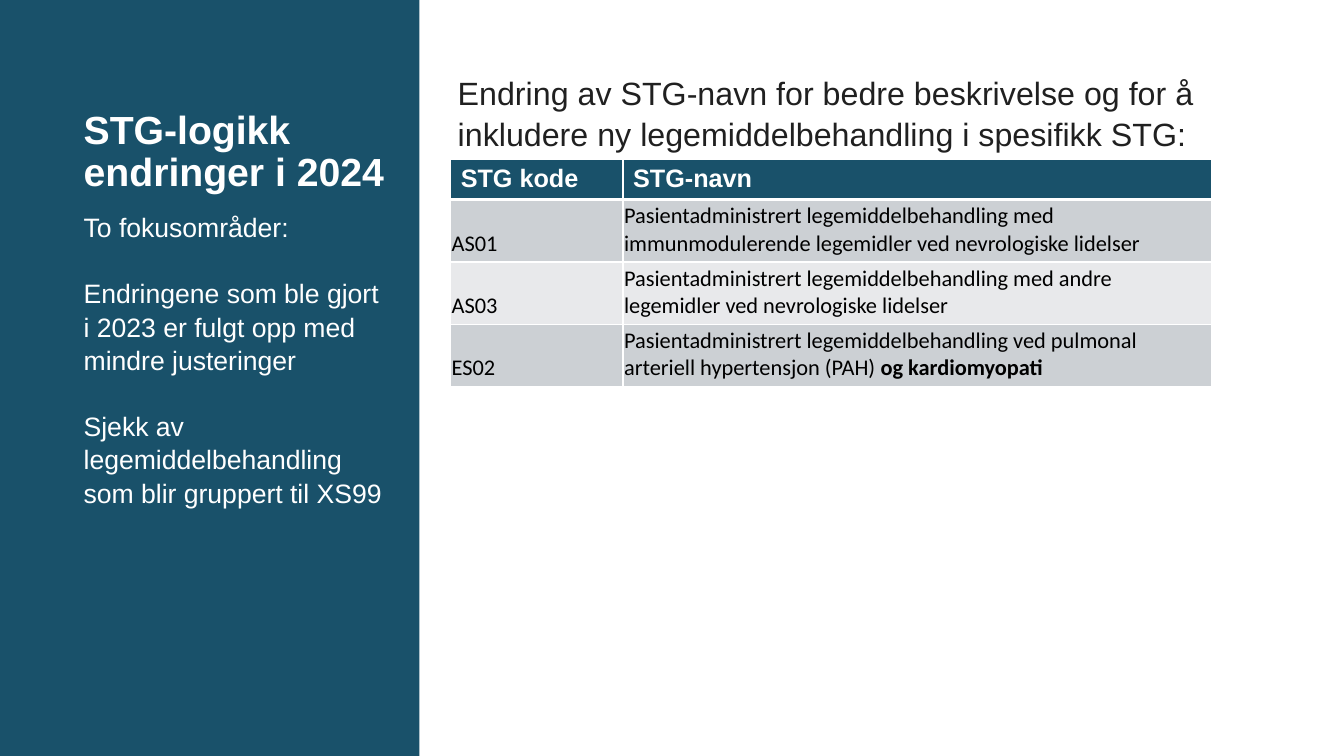
from dataclasses import dataclass

from lxml.etree import SubElement
from pptx import Presentation
from pptx.dml.color import RGBColor
from pptx.enum.shapes import MSO_SHAPE
from pptx.enum.text import MSO_ANCHOR
from pptx.oxml.ns import qn
from pptx.util import Inches, Pt


@dataclass(frozen=True)
class Theme:
    """Colours, fonts and type sizes of the slide."""
    teal: str = "19516A"
    white: str = "FFFFFF"
    ink: str = "202020"
    black: str = "000000"
    bands: tuple = ("CCD0D4", "E8E9EB")
    sans: str = "Arial"
    grid: str = "Calibri"
    title: int = 28
    lead: int = 23
    body: int = 19
    head: int = 18
    cell: int = 16


THEME = Theme()
POINTS = [
    "To fokusområder:",
    "Endringene som ble gjort i 2023 er fulgt opp med mindre justeringer",
    "Sjekk av legemiddelbehandling som blir gruppert til XS99",
]
LEAD = ("Endring av STG-navn for bedre beskrivelse og for å inkludere "
        "ny legemiddelbehandling i spesifikk STG:")
HEADS = ("STG kode", "STG-navn")
ROWS = [
    ("AS01", "Pasientadministrert legemiddelbehandling med "
             "immunmodulerende legemidler ved nevrologiske lidelser"),
    ("AS03", "Pasientadministrert legemiddelbehandling med andre "
             "legemidler ved nevrologiske lidelser"),
    ("ES02", "Pasientadministrert legemiddelbehandling ved pulmonal "
             "arteriell hypertensjon (PAH) "),
]
ADDED = "og kardiomyopati"


def style(para, size, color, face=THEME.sans, bold=False):
    """Format every run of a paragraph."""
    for run in para.runs:
        font = run.font
        font.name, font.size, font.bold = face, Pt(size), bold
        font.color.rgb = RGBColor.from_string(color)


def add_text(slide, box, lines, size, color, bold=False, pitch=1.05,
             gap=0, anchor=MSO_ANCHOR.TOP):
    """Place paragraphs in an unpadded text box."""
    frame = slide.shapes.add_textbox(*map(Inches, box)).text_frame
    frame.word_wrap = True
    frame.vertical_anchor = anchor
    frame.margin_left = frame.margin_right = 0
    frame.margin_top = frame.margin_bottom = 0
    frame.text = "\n".join(lines)
    for index, para in enumerate(frame.paragraphs):
        para.line_spacing = pitch
        para.space_before = Pt(gap if index else 0)
        style(para, size, color, bold=bold)


def add_edges(cell, base):
    """Draw white borders, with the bottom one at its own width."""
    props = cell._tc.get_or_add_tcPr()
    widths = {"lnL": 1, "lnR": 1, "lnT": 1, "lnB": base}
    for index, (tag, width) in enumerate(widths.items()):
        line = SubElement(props, qn(f"a:{tag}"), w=str(Pt(width)))
        fill = SubElement(line, qn("a:solidFill"))
        SubElement(fill, qn("a:srgbClr"), val=THEME.white)
        props.insert(index, line)


def fill_cell(cell, text, color):
    """Set the text and fill of a cell."""
    cell.text = text
    cell.fill.solid()
    cell.fill.fore_color.rgb = RGBColor.from_string(color)


def add_side(slide, left, top, width, height):
    """Build the teal panel with its title and points."""
    panel = slide.shapes.add_shape(
        MSO_SHAPE.RECTANGLE, *map(Inches, (left, top, width, height)))
    panel.shadow.inherit = False
    panel.fill.solid()
    panel.fill.fore_color.rgb = RGBColor.from_string(THEME.teal)
    panel.line.fill.background()
    inset, span = left + 0.83, width - 1.11
    add_text(slide, (inset, top + 1.05, span, 0.93),
             ["STG-logikk endringer i 2024"], THEME.title, THEME.white,
             bold=True, pitch=0.9, anchor=MSO_ANCHOR.MIDDLE)
    add_text(slide, (inset, top + 2.08, span, 5.08), POINTS,
             THEME.body, THEME.white, gap=23)


def add_codes(slide, left, top, width, height):
    """Build the table of codes and names."""
    frame = slide.shapes.add_table(
        len(ROWS) + 1, 2, *map(Inches, (left, top, width, height)))
    table = frame.table
    first, high = 1.71, 0.62
    table.columns[0].width = Inches(first)
    table.columns[1].width = Inches(width - first)
    table.rows[0].height = Inches(height - high * len(ROWS))
    for cell, text in zip(table.rows[0].cells, HEADS):
        fill_cell(cell, text, THEME.teal)
        add_edges(cell, 3)
        style(cell.text_frame.paragraphs[0], THEME.head, THEME.white,
              bold=True)
    for index, texts in enumerate(ROWS):
        row = table.rows[index + 1]
        row.height = Inches(high)
        for cell, text in zip(row.cells, texts):
            fill_cell(cell, text, THEME.bands[index % 2])
            add_edges(cell, 1)
            cell.vertical_anchor = MSO_ANCHOR.BOTTOM
            cell.margin_left = cell.margin_right = Inches(0.01)
            cell.margin_top = Inches(0.01)
            cell.margin_bottom = Inches(0.05)
            style(cell.text_frame.paragraphs[0], THEME.cell, THEME.black,
                  THEME.grid)
    para = table.cell(len(ROWS), 1).text_frame.paragraphs[0]
    extra = para.add_run()
    extra.text = ADDED
    style(para, THEME.cell, THEME.black, THEME.grid)
    extra.font.bold = True


def add_main(slide, left, top, width, height):
    """Build the lead text and the table below it."""
    add_text(slide, (left + 0.07, top, width - 0.07, height), [LEAD],
             THEME.lead, THEME.ink)
    add_codes(slide, left, top + 0.87, 7.55, 2.24)


def main():
    """Build and save the slide."""
    deck = Presentation()
    deck.slide_width, deck.slide_height = Inches(13.33), Inches(7.5)
    slide = deck.slides.add_slide(deck.slide_layouts[6])
    add_side(slide, 0, 0, 4.16, 7.5)
    add_main(slide, 4.47, 0.71, 8.51, 5.5)
    deck.save("out.pptx")


if __name__ == "__main__":
    main()
